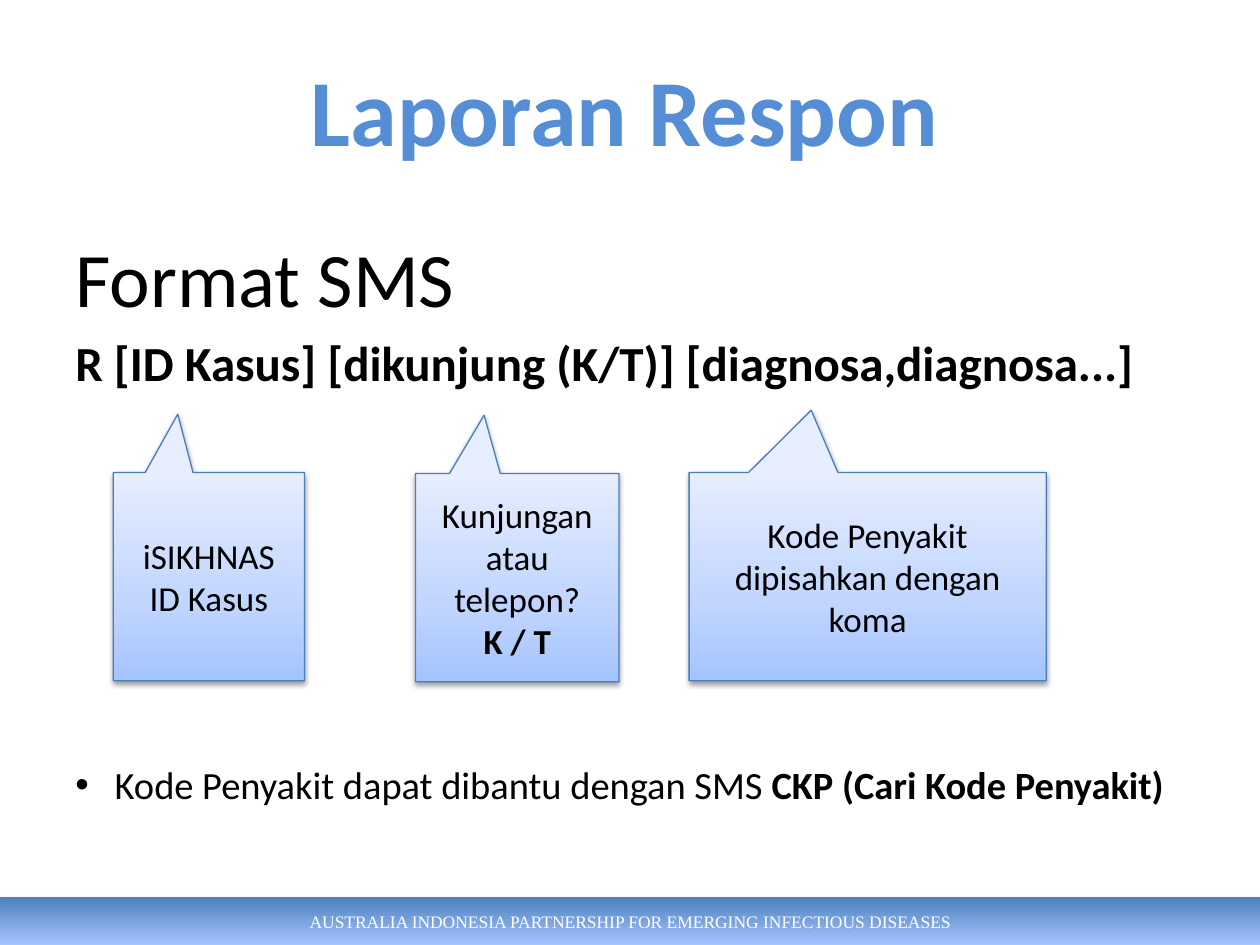
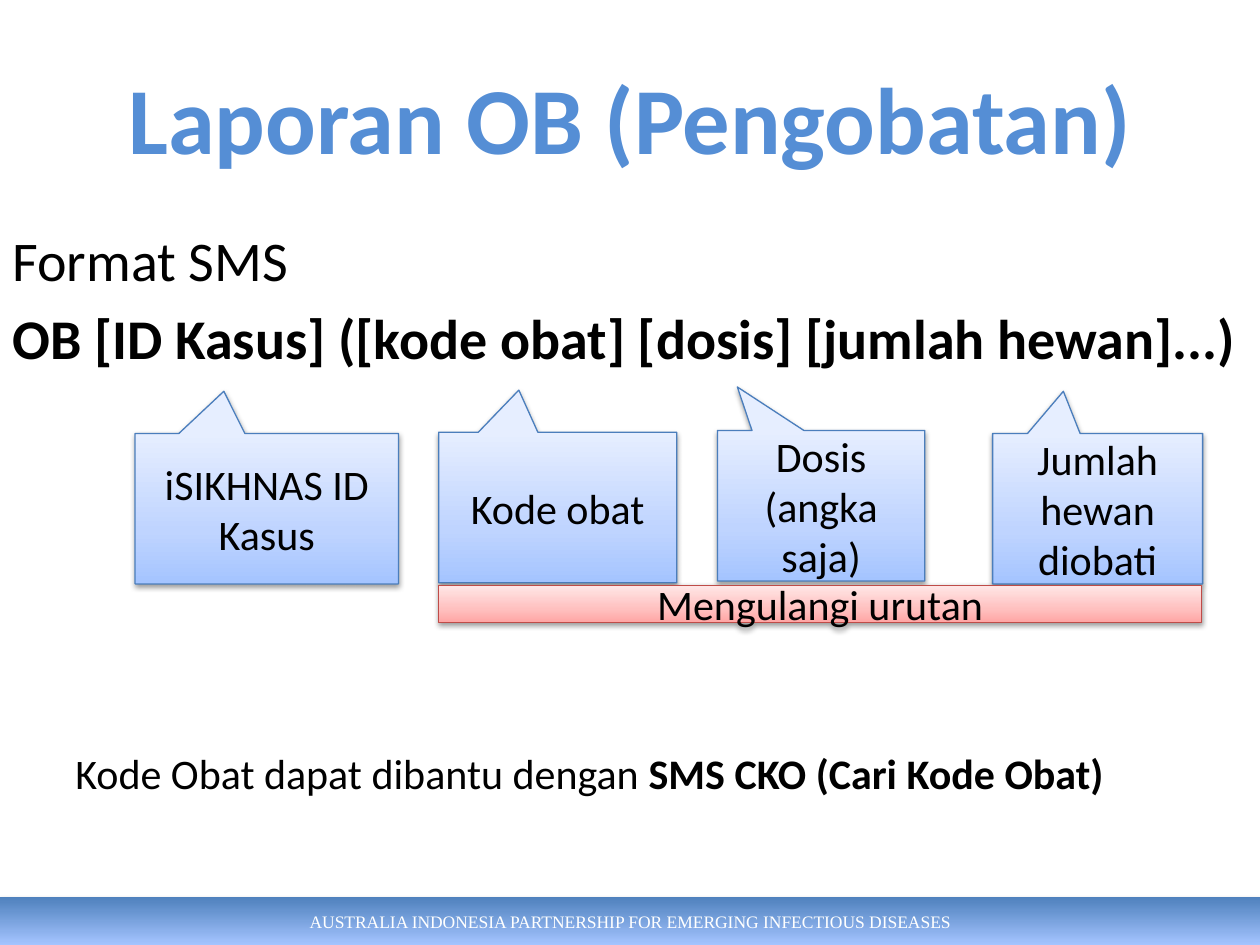
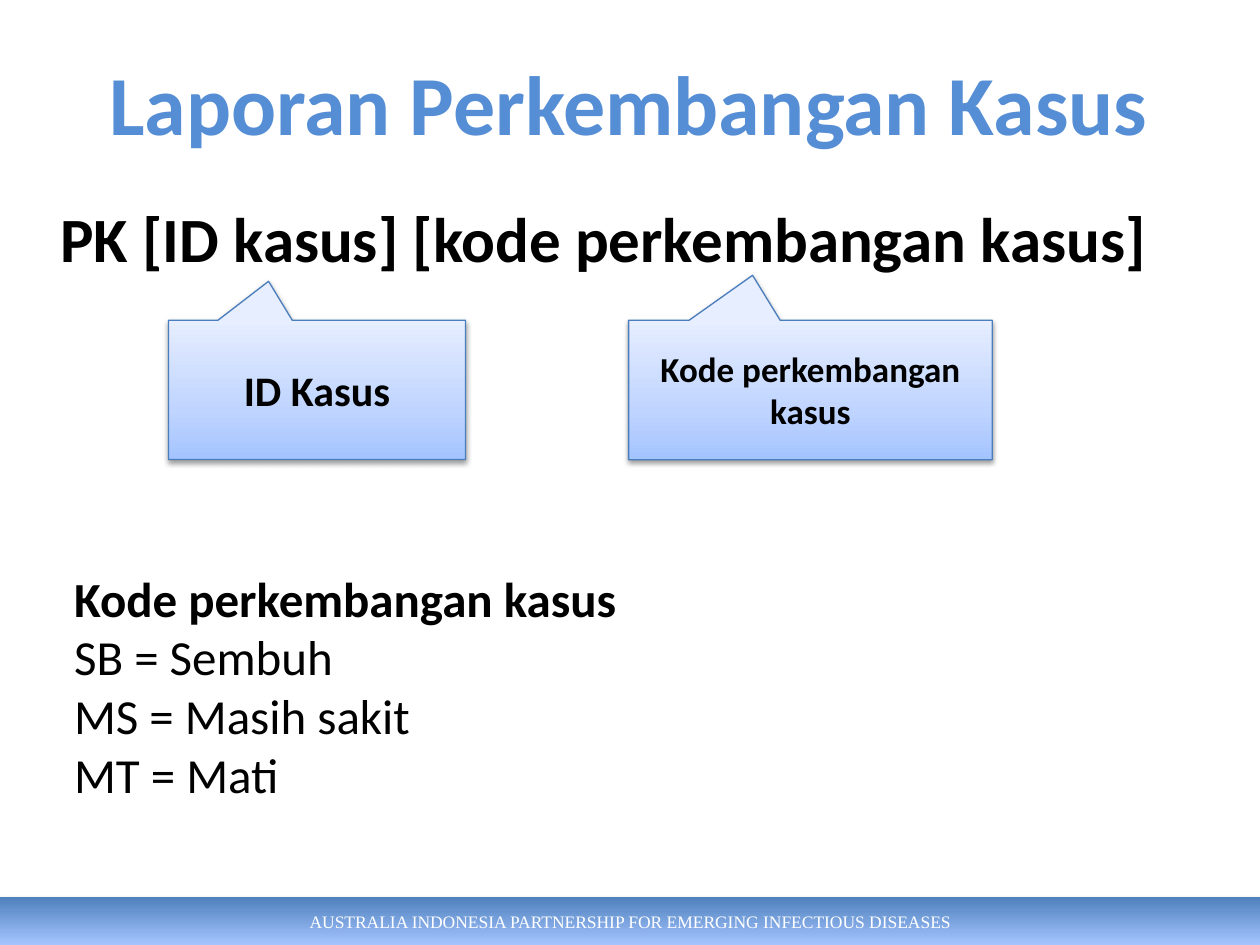
"""Build three slides explaining SMS report formats for animal health cases."""
from dataclasses import dataclass

import lxml.etree
import pptx
import pptx.dml.color
import pptx.enum.shapes
import pptx.enum.text
import pptx.oxml.ns
import pptx.util

Pt = pptx.util.Pt
qn = pptx.oxml.ns.qn
ALIGN = pptx.enum.text.PP_ALIGN
ANCHOR = pptx.enum.text.MSO_ANCHOR
SHAPES = pptx.enum.shapes.MSO_SHAPE

COLORS = {
    "title": "558ED5",
    "text": "000000",
    "footer_text": "FFFFFF",
    "shadow": "000000",
    "callout_line": "4B7EBC",
    "repeat_line": "BF4C48",
}
GRADIENTS = {
    "footer": ((0, "4F81BD"), (100, "A4C4FF")),
    "callout": ((0, "A4C4FF"), (35, "BFD4FF"), (100, "E6EEFF")),
    "repeat": ((0, "FFA6A5"), (35, "FFC0BF"), (100, "FFE7E7")),
}
DOWNWARD, UPWARD = 270, 90
FOOTER = "AUSTRALIA INDONESIA PARTNERSHIP FOR EMERGING INFECTIOUS DISEASES"
POINTER = (-0.163, -0.78)


@dataclass
class Line:
    """One paragraph: its text, or runs of (text, bold), and its look."""

    content: object
    size: float
    bold: bool = False
    color: str = "text"
    font: str = "Calibri"
    align: object = ALIGN.LEFT
    space_before: float = 0
    bullet: bool = False


def rgb(name):
    """Return the named colour."""
    return pptx.dml.color.RGBColor.from_string(COLORS[name])


def add_bullet(paragraph, indent):
    """Give a paragraph a round bullet with a hanging indent."""
    properties = paragraph._p.get_or_add_pPr()
    properties.set("marL", str(Pt(indent)))
    properties.set("indent", str(-Pt(indent)))
    lxml.etree.SubElement(properties, qn("a:buFont"), typeface="Arial")
    lxml.etree.SubElement(properties, qn("a:buChar"), char="•")


def write_lines(shape, lines, anchor):
    """Fill a shape with wrapped paragraphs."""
    frame = shape.text_frame
    frame.word_wrap = True
    frame.vertical_anchor = anchor
    for index, line in enumerate(lines):
        paragraph = frame.add_paragraph() if index else frame.paragraphs[0]
        if line.bullet:
            add_bullet(paragraph, 22.5)
        paragraph.alignment = line.align
        if line.space_before:
            paragraph.space_before = Pt(line.space_before)
        paragraph.font.name = line.font
        paragraph.font.size = Pt(line.size)
        paragraph.font.color.rgb = rgb(line.color)
        if isinstance(line.content, str):
            paragraph.font.bold = line.bold
            paragraph.add_run().text = line.content
        else:
            for text, bold in line.content:
                run = paragraph.add_run()
                run.text = text
                run.font.bold = bold


def add_text(slide, box, lines, anchor=ANCHOR.TOP):
    """Add a text box at (left, top, width, height)."""
    shape = slide.shapes.add_textbox(*map(Pt, box))
    write_lines(shape, lines, anchor)


def add_title(slide, box, text, size=54, anchor=ANCHOR.MIDDLE):
    """Add the bold, centred slide title."""
    line = Line(text, size, bold=True, color="title", align=ALIGN.CENTER)
    add_text(slide, box, [line], anchor)


def fill_gradient(shape, name, angle):
    """Fill a shape with the stops of a named gradient."""
    shape.fill.gradient()
    shape.fill.gradient_angle = angle
    stops = shape._element.spPr.find(qn("a:gradFill")).find(qn("a:gsLst"))
    for stop in list(stops):
        stops.remove(stop)
    for position, color in GRADIENTS[name]:
        stop = lxml.etree.SubElement(stops, qn("a:gs"), pos=str(position * 1000))
        lxml.etree.SubElement(stop, qn("a:srgbClr"), val=color)


def add_shadow(shape, opacity, distance):
    """Cast a soft shadow straight down."""
    shape.shadow.inherit = False
    effects = shape._element.spPr.find(qn("a:effectLst"))
    shadow = lxml.etree.SubElement(
        effects, qn("a:outerShdw"), blurRad=str(Pt(3.1)),
        dist=str(Pt(distance)), dir="5400000", rotWithShape="0")
    color = lxml.etree.SubElement(shadow, qn("a:srgbClr"), val=COLORS["shadow"])
    lxml.etree.SubElement(color, qn("a:alpha"), val=str(opacity * 1000))


def add_panel(slide, kind, box, lines, style, pointer=()):
    """Add an outlined gradient panel with centred text."""
    shape = slide.shapes.add_shape(kind, *map(Pt, box))
    for index, value in enumerate(pointer):
        shape.adjustments[index] = value
    fill_gradient(shape, style, UPWARD)
    shape.line.color.rgb = rgb(style + "_line")
    shape.line.width = Pt(0.75)
    add_shadow(shape, 38, 1.6)
    for line in lines:
        line.align = ALIGN.CENTER
    write_lines(shape, lines, ANCHOR.MIDDLE)


def add_callout(slide, box, lines, pointer=POINTER):
    """Add a blue callout that points up at the SMS format."""
    add_panel(slide, SHAPES.RECTANGULAR_CALLOUT, box, lines, "callout", pointer)


def add_footer(slide):
    """Add the footer band."""
    band = slide.shapes.add_shape(
        SHAPES.RECTANGLE, *map(Pt, (0, 512.6, 720, 27.4)))
    fill_gradient(band, "footer", DOWNWARD)
    band.line.fill.background()
    add_shadow(band, 35, 1.8)
    line = Line(FOOTER, 10, color="footer_text", font="Times New Roman",
                align=ALIGN.CENTER)
    write_lines(band, [line], ANCHOR.MIDDLE)


def add_slide(presentation):
    """Add a blank slide with the footer."""
    slide = presentation.slides.add_slide(presentation.slide_layouts[6])
    add_footer(slide)
    return slide


def build_response(presentation):
    """Build the response report slide."""
    slide = add_slide(presentation)
    add_text(slide, (36, 128, 648, 354), [
        Line("Format SMS", 44),
        Line("R [ID Kasus] [dikunjung (K/T)] [diagnosa,diagnosa...]", 28,
             bold=True, space_before=5.6),
    ])
    add_callout(slide, (64.8, 270, 109.2, 119), [Line("iSIKHNAS ID Kasus", 20)])
    add_callout(slide, (393.8, 270, 204, 119),
                [Line("Kode Penyakit dipisahkan dengan koma", 20)],
                (-0.158, -0.799))
    add_callout(slide, (237.5, 270.6, 116.2, 119), [
        Line("Kunjungan atau telepon?", 20), Line("K / T", 20, bold=True)])
    add_title(slide, (31, 26, 652, 73), "Laporan Respon", anchor=ANCHOR.TOP)
    add_text(slide, (36, 431.3, 648, 34), [
        Line([("Kode Penyakit dapat dibantu dengan SMS ", False),
              ("CKP (Cari Kode Penyakit)", True)], 22, bullet=True)])


def build_treatment(presentation):
    """Build the treatment report slide."""
    slide = add_slide(presentation)
    add_text(slide, (0, 125.3, 720, 246), [
        Line("Format SMS", 32),
        Line("OB [ID Kasus] ([kode obat] [dosis] [jumlah hewan]...)", 32,
             bold=True, space_before=6.4),
    ])
    callouts = (
        (77.2, 247.7, 150.5, "iSIKHNAS ID Kasus", POINTER),
        (410, 246, 118.5, "Dosis (angka saja)", (-0.404, -0.789)),
        (567.2, 247.7, 120, "Jumlah hewan diobati", POINTER),
        (250.7, 247, 136, "Kode obat", POINTER),
    )
    for left, top, width, text, pointer in callouts:
        add_callout(slide, (left, top, width, 86), [Line(text, 24)], pointer)
    add_panel(slide, SHAPES.RECTANGLE, (250.7, 334.4, 436, 21.2),
              [Line("Mengulangi urutan", 24)], "repeat")
    add_title(slide, (36, 21.6, 648, 90), "Laporan OB (Pengobatan)")
    add_text(slide, (36, 423.4, 607, 36), [
        Line([("Kode Obat dapat dibantu dengan ", False),
              ("SMS CKO (Cari Kode Obat)", True)], 24)])


def build_progress(presentation):
    """Build the case progress report slide."""
    slide = add_slide(presentation)
    add_text(slide, (27.4, 110.2, 680, 55), [
        Line("PK [ID kasus] [kode perkembangan kasus]", 36, bold=True)])
    add_callout(slide, (96.3, 183, 169.7, 79.5), [Line("ID Kasus", 24, bold=True)])
    add_callout(slide, (359.2, 183, 207.8, 79.7),
                [Line("Kode perkembangan kasus", 20, bold=True)],
                (-0.159, -0.822))
    codes = ("SB = Sembuh", "MS = Masih sakit", "MT = Mati")
    add_text(slide, (35.3, 321.1, 374, 165), [
        Line("Kode perkembangan kasus", 28, bold=True),
        *(Line(code, 28) for code in codes)])
    add_title(slide, (35.3, 13, 648, 90), "Laporan Perkembangan Kasus", 48)


def main():
    """Build and save the presentation."""
    presentation = pptx.Presentation()
    presentation.slide_width = Pt(720)
    presentation.slide_height = Pt(540)
    build_response(presentation)
    build_treatment(presentation)
    build_progress(presentation)
    presentation.save("out.pptx")


if __name__ == "__main__":
    main()
